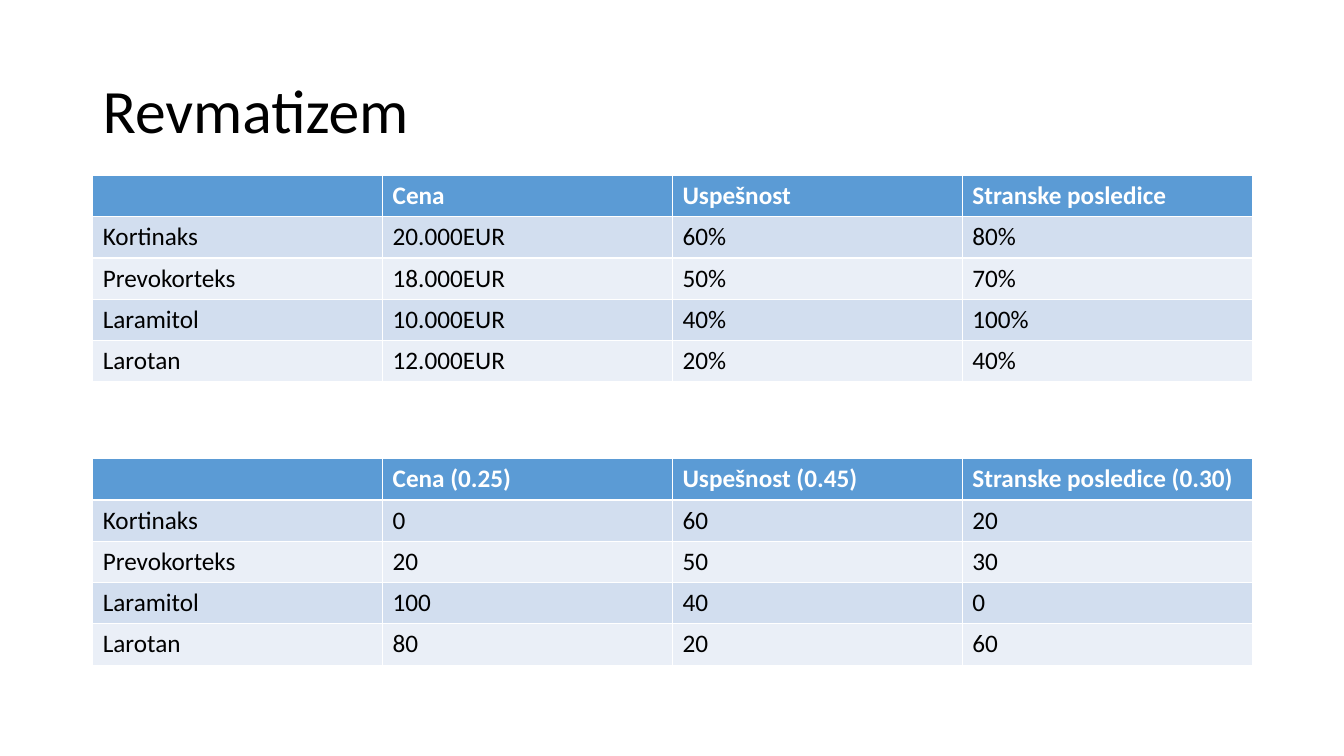
"""Builds the Revmatizem slide: drug properties above their weighted scores."""
from pptx import Presentation, util as u
from pptx.dml.color import RGBColor
from pptx.enum import text

THEME = {
    "font": "Calibri", "title": 44, "body": 18,
    "dark": "000000", "light": "FFFFFF",
    "header": "5B9BD5", "bands": ("EAEFF7", "D2DEEF"),
}
LEFT, WIDTH, ROW_H = u.Inches(0.92), u.Inches(11.5), u.Inches(0.41)
DRUGS = ("Kortinaks", "Prevokorteks", "Laramitol", "Larotan")
TABLES = (
    (1.74, ("Cena", "Uspešnost", "Stranske posledice"),
     (("20.000EUR", "60%", "80%"), ("18.000EUR", "50%", "70%"),
      ("10.000EUR", "40%", "100%"), ("12.000EUR", "20%", "40%"))),
    (4.55, ("Cena (0.25)", "Uspešnost (0.45)", "Stranske posledice (0.30)"),
     (("0", "60", "20"), ("20", "50", "30"),
      ("100", "40", "0"), ("80", "20", "60"))),
)


def write(p, words, size, color, bold=False):
    r = p.add_run()
    r.text = words
    formats = {"name": THEME["font"], "size": u.Pt(size), "bold": bold}
    for key, value in formats.items():
        setattr(r.font, key, value)
    r.font.color.rgb = RGBColor.from_string(color)


prs = Presentation()
prs.slide_width, prs.slide_height = u.Inches(13.33), u.Inches(7.5)
s = prs.slides.add_slide(prs.slide_layouts[6])

tf = s.shapes.add_textbox(LEFT, u.Inches(0.4), WIDTH, u.Inches(1.45)).text_frame
for key, value in {"word_wrap": True, "vertical_anchor": text.MSO_ANCHOR.MIDDLE}.items():
    setattr(tf, key, value)
tf.paragraphs[0].line_spacing = 0.9
write(tf.paragraphs[0], "Revmatizem", THEME["title"], THEME["dark"])

for top, headings, values in TABLES:
    rows = [("", *headings)] + [(drug, *line) for drug, line in zip(DRUGS, values)]
    table = s.shapes.add_table(len(rows), len(rows[0]), LEFT, u.Inches(top),
                               WIDTH, ROW_H * len(rows)).table
    for i, row in enumerate(rows):
        head = i == 0
        fill = THEME["header"] if head else THEME["bands"][i % 2]
        color = THEME["light"] if head else THEME["dark"]
        for j, words in enumerate(row):
            cell = table.cell(i, j)
            cell.fill.solid()
            cell.fill.fore_color.rgb = RGBColor.from_string(fill)
            if words:
                write(cell.text_frame.paragraphs[0], words, THEME["body"], color, head)

prs.save("out.pptx")
